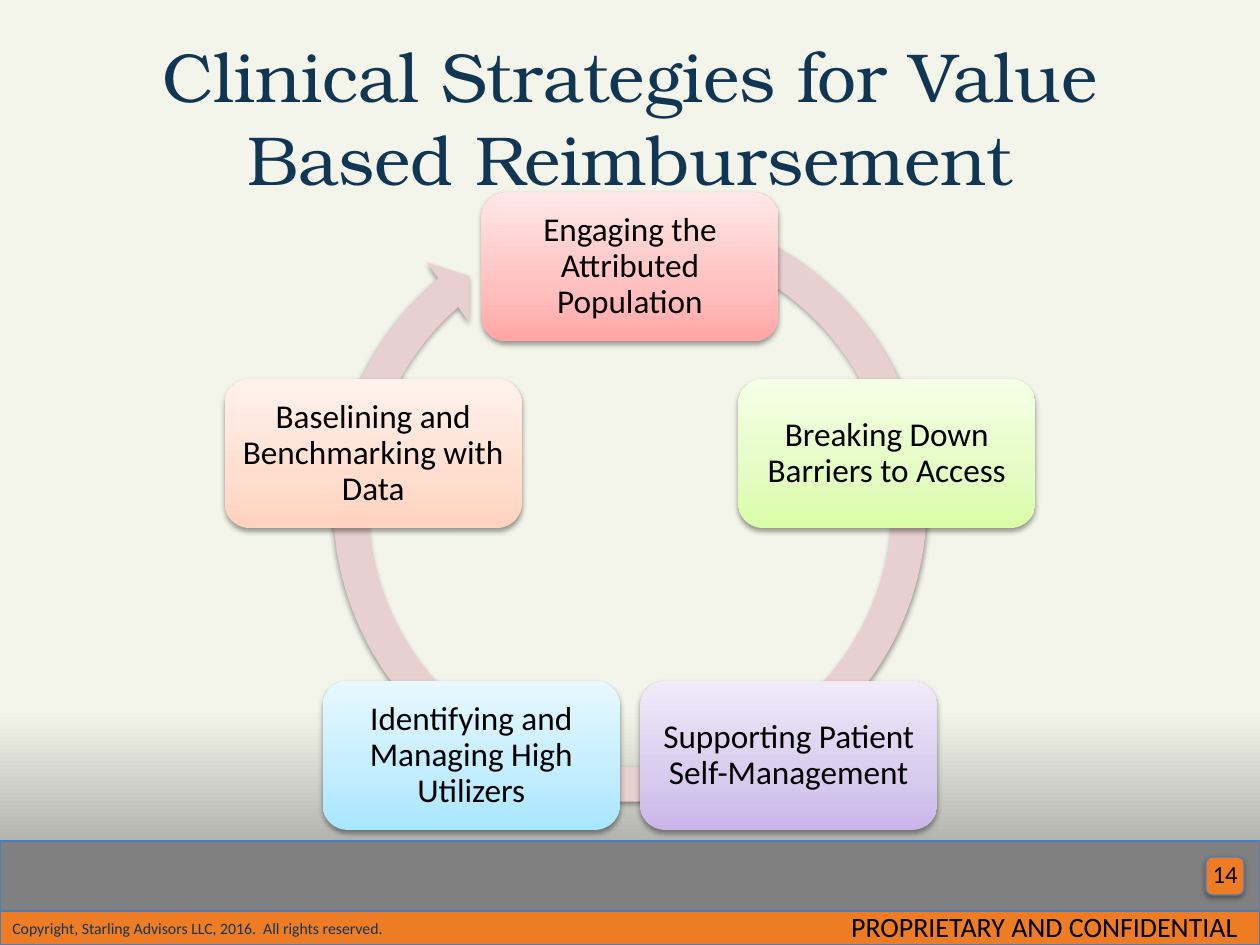
from copy import deepcopy
from math import cos, radians, sin

from lxml import etree
from pptx import Presentation
from pptx.dml.color import RGBColor
from pptx.enum.shapes import MSO_SHAPE
from pptx.enum.text import MSO_ANCHOR, MSO_AUTO_SIZE, PP_ALIGN
from pptx.oxml.ns import qn
from pptx.util import Pt

PX = 914400 / 126
RECT, ROUND = MSO_SHAPE.RECTANGLE, MSO_SHAPE.ROUNDED_RECTANGLE
ARROW = MSO_SHAPE.CIRCULAR_ARROW
MIDDLE = MSO_ANCHOR.MIDDLE
CENTER, LEFT, RIGHT = PP_ALIGN.CENTER, PP_ALIGN.LEFT, PP_ALIGN.RIGHT

CREAM = RGBColor(0xF4, 0xF5, 0xEA)
GRAY = RGBColor(0x80, 0x80, 0x80)
ORANGE = RGBColor(0xEE, 0x7C, 0x25)
BLUE = RGBColor(0x4B, 0x7E, 0xBC)
NAVY = RGBColor(0x11, 0x36, 0x54)
ROSE = RGBColor(0xE8, 0xD0, 0xD0)
BLACK = RGBColor(0, 0, 0)


def px(*sizes):
    return [round(size * PX) for size in sizes]


def add_shape(kind, box, fill=None, line=None, alpha=38):
    """Add a shape with a soft shadow below it; alpha is its opacity in percent."""
    shape = slide.shapes.add_shape(kind, *px(*box))
    if fill is not None:
        shape.fill.solid()
        shape.fill.fore_color.rgb = fill
    if line is None:
        shape.line.fill.background()
    else:
        shape.line.color.rgb = line
        shape.line.width = Pt(0.75)
    shape.shadow.inherit = False
    effects = shape.element.spPr.find(qn("a:effectLst"))
    glow = etree.SubElement(effects, qn("a:outerShdw"), blurRad=str(Pt(3.1)),
                            dist=str(Pt(1.7)), dir="5400000", rotWithShape="0")
    color = etree.SubElement(glow, qn("a:srgbClr"), val="000000")
    etree.SubElement(color, qn("a:alpha"), val=str(alpha * 1000))
    return shape


prs = Presentation()
prs.slide_width, prs.slide_height = px(1260, 945)
slide = prs.slides.add_slide(prs.slide_layouts[5])

# Background fades to gray at the foot
back = slide.background.fill
back.gradient()
back.gradient_angle = 270
for stop, place, color in zip(back.gradient_stops, (0.75, 1), (CREAM, GRAY)):
    stop.position = place
    stop.color.rgb = color

# Title
title = slide.shapes.title
title.left, title.top, title.width, title.height = px(63, 38, 1134, 157)
frame = title.text_frame
frame.text = "Clinical Strategies for Value Based Reimbursement"
frame.auto_size = MSO_AUTO_SIZE.NONE
frame.vertical_anchor = MIDDLE
para = frame.paragraphs[0]
para.alignment = CENTER
para.font.name, para.font.size = "TeX Gyre Bonum", Pt(39.6)
para.font.color.rgb = NAVY

# Footer
add_shape(RECT, (0, 841, 1260, 104), GRAY, BLUE, 35)
strip = add_shape(RECT, (0, 911, 1260, 34), ORANGE, BLUE, 35)
add_shape(ROUND, (1206, 857, 38, 38), ORANGE, BLUE, 35)
number = slide.shapes.add_textbox(*px(1184, 853, 66, 50))
notice = slide.shapes.add_textbox(*px(685, 903, 565, 47))
strip.text_frame.vertical_anchor = MIDDLE
for shape, text, size, color, align in (
    (strip, "Copyright, Starling Advisors LLC, 2016.  All rights reserved.", 9, NAVY, LEFT),
    (number, "14", 14, BLACK, RIGHT),
    (notice, "PROPRIETARY AND CONFIDENTIAL", 16, BLACK, RIGHT),
):
    frame = shape.text_frame
    frame.word_wrap = True
    frame.text = text
    para = frame.paragraphs[0]
    para.alignment = align
    para.font.name, para.font.size = "Calibri", Pt(size)
    para.font.color.rgb = color

# Cycle: a ring arrow with five steps spaced evenly, clockwise from the top
ring = add_shape(ARROW, (314, 189, 632, 632), ROSE)
for index, value in enumerate((0.055, 3.307, 137.658, 173.921, 0.058)):
    ring.adjustments[index] = value

STEPS = (
    ("Engaging the Attributed Population", "FFA6A5", "FFC0BF", "FFE7E7"),
    ("Breaking Down Barriers to Access", "DAFDA7", "E4FCC2", "F5FFE7"),
    ("Supporting Patient Self-Management", "C9B5E8", "D8CBEE", "F0EAF9"),
    ("Identifying and Managing High Utilizers", "A7E6FF", "C1EDFF", "E7F8FF"),
    ("Baselining and Benchmarking with Data", "FFD2BD", "FFDED0", "FFF2ED"),
)
MID_X, MID_Y, RADIUS = 630, 537, 270
WIDE, HIGH = 297, 149
for index, (text, *shades) in enumerate(STEPS):
    angle = radians(index * 360 / len(STEPS))
    left = MID_X + RADIUS * sin(angle) - WIDE / 2
    top = MID_Y - RADIUS * cos(angle) - HIGH / 2
    step = add_shape(ROUND, (left, top, WIDE, HIGH))
    step.fill.gradient()
    step.fill.gradient_angle = 90
    stops = step.element.spPr.find(".//" + qn("a:gsLst"))
    stops.append(deepcopy(stops[0]))
    for stop, place, shade in zip(step.fill.gradient_stops, (0, 0.35, 1), shades):
        stop.position = place
        stop.color.rgb = RGBColor.from_string(shade)
    frame = step.text_frame
    frame.margin_left, frame.margin_right, frame.margin_top, frame.margin_bottom = px(10, 10, 10, 10)
    frame.vertical_anchor = MIDDLE
    frame.word_wrap = True
    frame.text = text
    para = frame.paragraphs[0]
    para.alignment = CENTER
    para.line_spacing = 0.9
    para.font.name, para.font.size = "Calibri", Pt(19)
    para.font.color.rgb = BLACK

prs.save("out.pptx")
